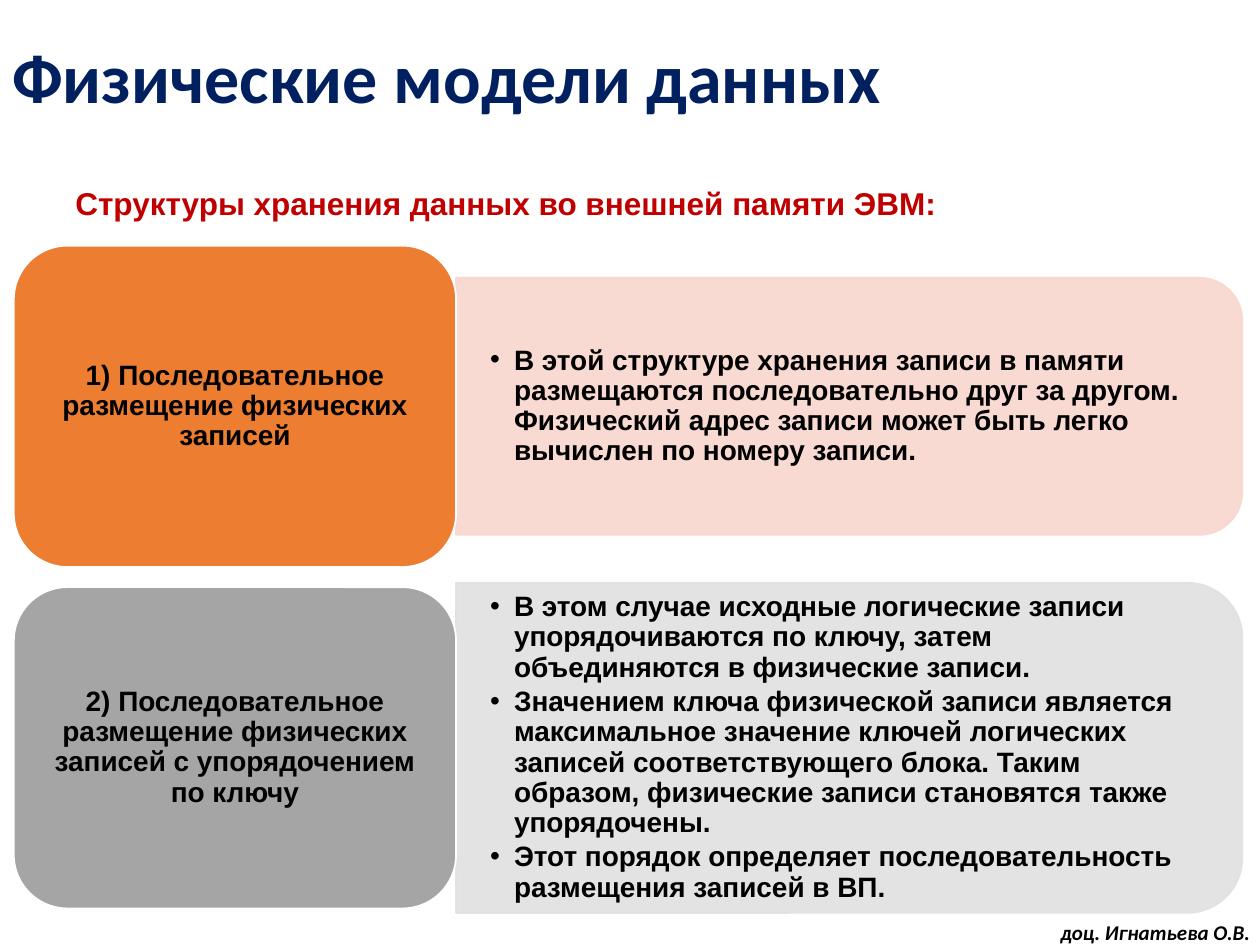
from lxml import etree
from pptx import Presentation
from pptx.dml.color import RGBColor
from pptx.enum import shapes, text
from pptx.oxml.ns import qn
from pptx.util import Inches, Pt

NAVY = RGBColor(0x00, 0x20, 0x60)
RED = RGBColor(0xC0, 0x00, 0x00)
BLACK = RGBColor(0, 0, 0)
WHITE = RGBColor(0xFF, 0xFF, 0xFF)
ORANGE = RGBColor(0xED, 0x7D, 0x31)
PEACH = RGBColor(0xF8, 0xD7, 0xCE)
GRAY = RGBColor(0xA5, 0xA5, 0xA5)
PALE = RGBColor(0xE1, 0xE1, 0xE1)

# Content
TITLE = "Физические модели данных"
LEAD = "Структуры хранения данных во внешней памяти ЭВМ:"
AUTHOR = "доц. Игнатьева О.В."
# Each row: heading, points, card colour, panel colour, panel height
ROWS = [
    ("1) Последовательное размещение физических записей",
     ["В этой структуре хранения записи в памяти размещаются "
      "последовательно друг за другом. Физический адрес записи может "
      "быть легко вычислен по номеру записи."],
     ORANGE, PEACH, 2.04),
    ("2) Последовательное размещение физических записей "
     "с упорядочением по ключу",
     ["В этом случае исходные логические записи упорядочиваются по ключу, "
      "затем объединяются в физические записи.",
      "Значением ключа физической записи является максимальное значение "
      "ключей логических записей соответствующего блока. Таким образом, "
      "физические записи становятся также упорядочены.",
      "Этот порядок определяет последовательность размещения записей в ВП."],
     GRAY, PALE, 2.62),
]

# Grid
WIDE, HIGH = 10, 7.5
LEFT, TOP, PITCH = 0.11, 1.95, 2.71
CARD_W, CARD_H, PANEL_W = 3.51, 2.55, 6.24
EDGE = LEFT + CARD_W
INSET = 0.125

# Text formats
HEAD = dict(name="Calibri", size=Pt(40), bold=True)
SUB = dict(name="Arial", size=Pt(18), bold=True)
BODY = dict(name="Arial", size=Pt(16), bold=True)
SIGN = dict(name="Calibri", size=Pt(12), bold=True, italic=True)
MID = text.MSO_ANCHOR.MIDDLE

deck = Presentation()
deck.slide_width, deck.slide_height = Inches(WIDE), Inches(HIGH)
slide = deck.slides.add_slide(deck.slide_layouts[6])


def write(box, lines, font, color, pad=(0.1, 0.05), anchor=None,
          bullet=False, indent=None, **para):
    frame = slide.shapes.add_textbox(*map(Inches, box)).text_frame
    side, edge = map(Inches, pad)
    form = dict(word_wrap=True, margin_left=side, margin_right=side,
                margin_top=edge, margin_bottom=edge)
    if anchor is not None:
        form["vertical_anchor"] = anchor
    for key, val in form.items():
        setattr(frame, key, val)
    for i, line in enumerate(lines):
        p = frame.add_paragraph() if i else frame.paragraphs[0]
        p.text = line
        for key, val in para.items():
            setattr(p, key, val)
        props = p._p.get_or_add_pPr()
        if bullet:
            props.set("marL", str(Inches(0.19)))
            props.set("indent", str(Inches(-0.19)))
            etree.SubElement(props, qn("a:buFont")).set("typeface", "Arial")
            etree.SubElement(props, qn("a:buChar")).set("char", "•")
        elif indent:
            props.set("indent", str(Inches(indent)))
        for key, val in font.items():
            setattr(p.runs[0].font, key, val)
        p.runs[0].font.color.rgb = color


def block(kind, box, fill, line):
    shape = slide.shapes.add_shape(kind, *map(Inches, box))
    shape.shadow.inherit = False
    shape.fill.solid()
    shape.fill.fore_color.rgb = fill
    shape.line.color.rgb = line
    shape.line.width = Pt(1)
    return shape


# Title, lead and author
write((0, 0.11, WIDE, 1.07), [TITLE], HEAD, NAVY, anchor=MID, line_spacing=0.9)
write((0, 1.41, WIDE, 0.47), [LEAD], SUB, RED, indent=0.5,
      alignment=text.PP_ALIGN.JUSTIFY)
write((8.32, 7.25, 1.73, 0.3), [AUTHOR], SIGN, BLACK)

# Rows: panel turned to round its right side, then points, card and heading
for i, (name, points, dark, light, tall) in enumerate(ROWS):
    top = TOP + i * PITCH
    mid = top + CARD_H / 2
    panel = block(shapes.MSO_SHAPE.ROUND_2_SAME_RECTANGLE,
                  (EDGE + (PANEL_W - tall) / 2, mid - PANEL_W / 2,
                   tall, PANEL_W), light, light)
    panel.rotation = 90
    for tint in panel._element.spPr.iter(qn("a:srgbClr")):
        etree.SubElement(tint, qn("a:alpha")).set("val", "90000")
    inner = tall - 2 * INSET + 0.02
    write((EDGE, mid - inner / 2, PANEL_W - INSET, inner), points, BODY, BLACK,
          (0.27, 0.14), MID, bullet=True, line_spacing=0.9, space_after=Pt(2.4))
    block(shapes.MSO_SHAPE.ROUNDED_RECTANGLE,
          (LEFT, top, CARD_W, CARD_H), dark, WHITE)
    write((LEFT + INSET, top + INSET, CARD_W - 2 * INSET, CARD_H - 2 * INSET),
          [name], BODY, BLACK, (0.07, 0.03), MID, line_spacing=0.9,
          alignment=text.PP_ALIGN.CENTER)

deck.save("out.pptx")
